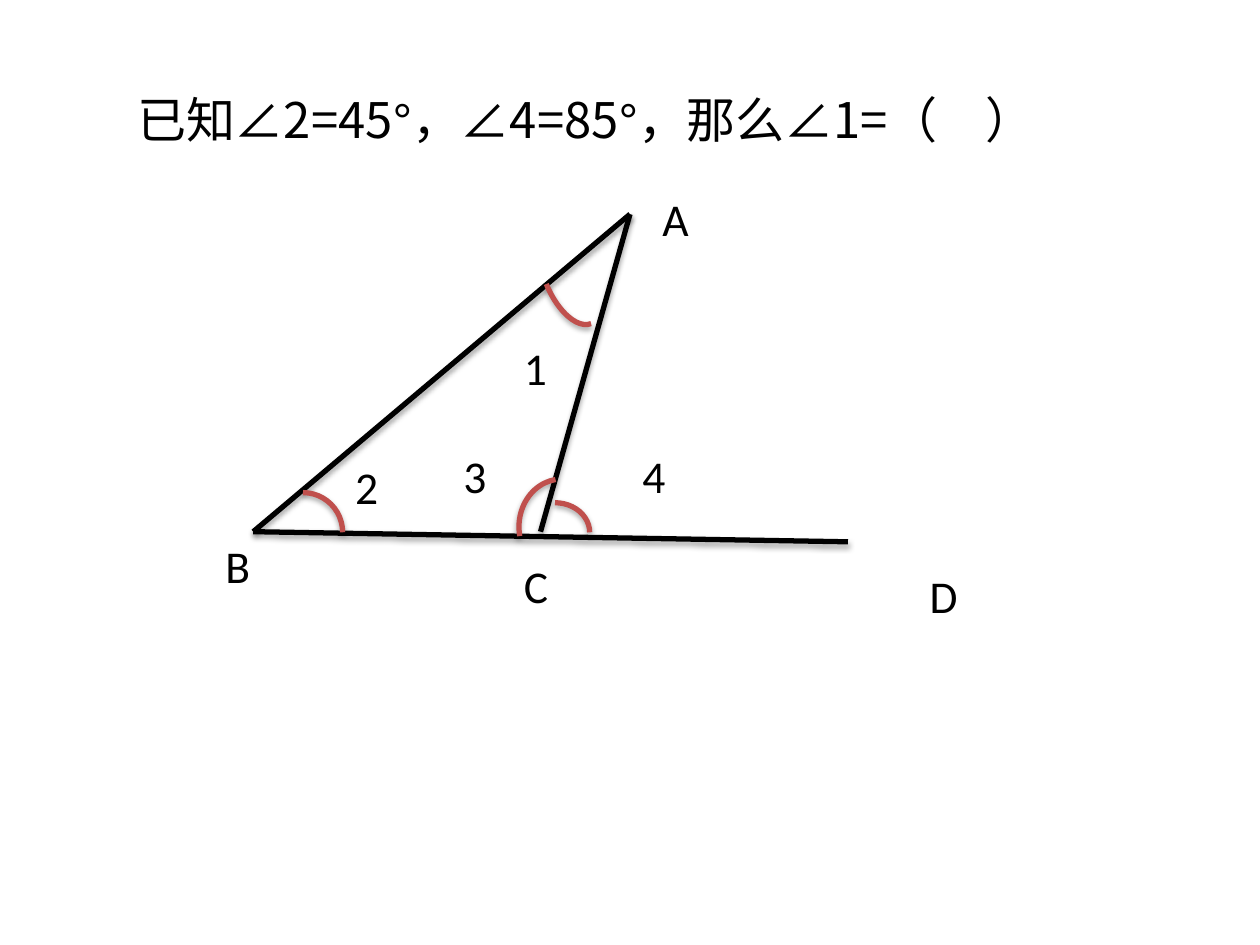
from lxml.etree import SubElement
from pptx import Presentation
from pptx.dml.color import RGBColor
from pptx.enum.shapes import MSO_CONNECTOR, MSO_SHAPE
from pptx.enum.text import MSO_AUTO_SIZE
from pptx.oxml.ns import qn
from pptx.util import Inches, Pt

BLACK, RED = "000000", "C0504D"
CJK = "Noto Sans CJK SC"


def color(code):
    return RGBColor.from_string(code)


def add_text(slide, text, left, top, width, height, size=26, font="Calibri", ink=BLACK):
    box = slide.shapes.add_textbox(Inches(left), Inches(top), Inches(width), Inches(height))
    frame = box.text_frame
    frame.word_wrap = True
    frame.auto_size = MSO_AUTO_SIZE.SHAPE_TO_FIT_TEXT
    parts = [(text, font)] if isinstance(text, str) else text
    for words, face in parts:
        run = frame.paragraphs[0].add_run()
        run.text = words
        run.font.size = Pt(size)
        run.font.name = face
        run.font.color.rgb = color(ink)
        SubElement(run.font._element, qn("a:ea"), typeface=CJK)


def style(shape, ink):
    shape.line.color.rgb = color(ink)
    shape.line.width = Pt(3)
    props = shape._element.spPr
    for old in props.findall(qn("a:effectLst")):
        props.remove(old)
    list_ = SubElement(props, qn("a:effectLst"))
    shade = SubElement(list_, qn("a:outerShdw"), blurRad="40000", dist="23000",
                       dir="5400000", rotWithShape="0")
    tint = SubElement(shade, qn("a:srgbClr"), val=BLACK)
    SubElement(tint, qn("a:alpha"), val="35000")


def add_line(slide, start, end):
    ends = [Inches(n) for n in (*start, *end)]
    style(slide.shapes.add_connector(MSO_CONNECTOR.STRAIGHT, *ends), BLACK)


def add_arc(slide, left, top, width, height, turn):
    arc = slide.shapes.add_shape(MSO_SHAPE.ARC, Inches(left), Inches(top),
                                 Inches(width), Inches(height))
    arc.rotation = turn
    arc.fill.background()
    style(arc, RED)


def add_title(slide, left, top, width, height):
    parts = [("已知∠2=45", CJK), ("°,".replace(",", "，"), "Arial"), ("∠4=85", CJK),
             ("°，那么", "Arial"), ("∠1=（　）", CJK)]
    add_text(slide, parts, left, top, width, height, size=28)


def add_figure(slide, left, top):
    a, b, c, d = [(left + x, top + y) for x, y in
                  ((3.31, 0.23), (0.32, 2.75), (2.6, 2.75), (5.04, 2.83))]
    for start, end in ((a, b), (b, d), (a, c)):
        add_line(slide, start, end)

    arcs = [(2.44, 2.52, 0.55, 0.47, 0), (0.4, 2.44, 0.63, 0.63, 0),
            (2.63, 0.28, 0.42, 0.85, 157.8), (2.39, 2.37, 0.79, 0.71, 260.4)]
    for x, y, width, height, turn in arcs:
        add_arc(slide, left + x, top + y, width, height, turn)

    labels = [("A", 3.47, 0, 0.94), ("B", 0, 2.75, 1.02), ("C", 2.37, 2.91, 0.71),
              ("D", 5.59, 2.99, 1.18), ("1", 2.37, 1.18, 1.42), ("2", 1.03, 2.12, 1.1),
              ("4", 3.31, 2.04, 0.79), ("3", 1.89, 2.04, 0.94)]
    for name, x, y, width in labels:
        add_text(slide, name, left + x, top + y, width, 0.54)


def main():
    deck = Presentation()
    deck.slide_width, deck.slide_height = Inches(10), Inches(7.5)
    slide = deck.slides.add_slide(deck.slide_layouts[6])
    add_figure(slide, 1.69, 1.47)
    add_title(slide, 0.99, 0.66, 8.8, 0.57)
    deck.save("out.pptx")


if __name__ == "__main__":
    main()
